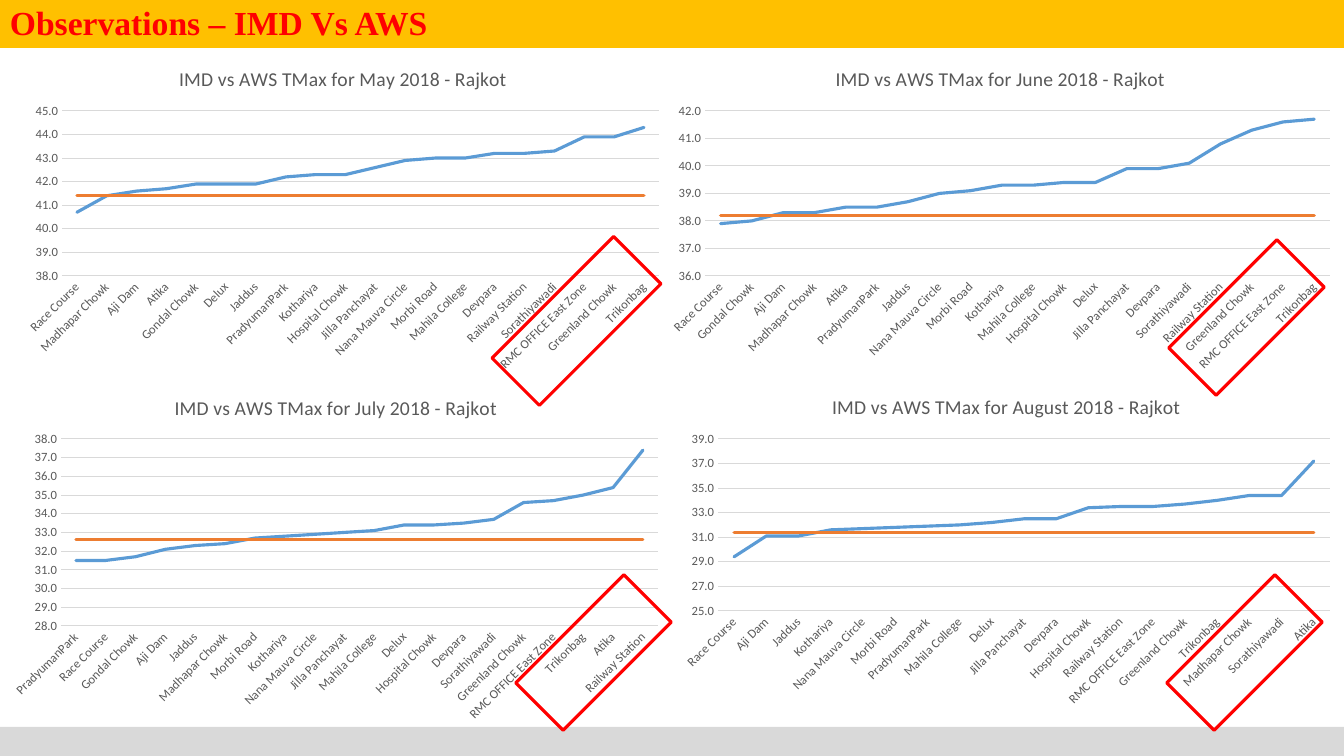
from lxml import etree
from pptx import Presentation
from pptx.chart.data import CategoryChartData
from pptx.dml.color import RGBColor
from pptx.enum.chart import XL_CHART_TYPE, XL_MARKER_STYLE, XL_TICK_MARK
from pptx.enum.shapes import MSO_SHAPE
from pptx.enum.text import MSO_ANCHOR, PP_ALIGN
from pptx.oxml.ns import qn
from pptx.util import Pt

LINE, NO_TICK, NO_MARKER = XL_CHART_TYPE.LINE, XL_TICK_MARK.NONE, XL_MARKER_STYLE.NONE
RECT, BOTTOM, LEFT = MSO_SHAPE.RECTANGLE, MSO_ANCHOR.BOTTOM, PP_ALIGN.LEFT

PX = 12192000 / 1344
WIDTH, HEIGHT = 1344, 756
COLORS = {"banner": "FFC000", "red": "FF0000", "footer": "D9D9D9",
          "grid": "D9D9D9", "label": "595959", "aws": "5B9BD5", "imd": "ED7D31"}

TITLE = "Observations – IMD Vs AWS"
BANNER = (0, 0, WIDTH, 48)
FOOTER = (0, 727, WIDTH, 29)

# box and plot are (left, top, width, height); scale is (min, max, step)
CHARTS = [
    {"month": "May", "box": (14, 50, 658, 328), "plot": (62, 111, 597, 165),
     "scale": (38, 45, 1), "imd": 41.4,
     "aws": [("Race Course", 40.7), ("Madhapar Chowk", 41.4), ("Aji Dam", 41.6),
             ("Atika", 41.7), ("Gondal Chowk", 41.9), ("Delux", 41.9),
             ("Jaddus", 41.9), ("PradyumanPark", 42.2), ("Kothariya", 42.3),
             ("Hospital Chowk", 42.3), ("Jilla Panchayat", 42.6),
             ("Nana Mauva Circle", 42.9), ("Morbi Road", 43.0),
             ("Mahila College", 43.0), ("Devpara", 43.2),
             ("Railway Station", 43.2), ("Sorathiyawadi", 43.3),
             ("RMC OFFICE East Zone", 43.9), ("Greenland Chowk", 43.9),
             ("Trikonbag", 44.3)]},
    {"month": "June", "box": (657, 50, 687, 328), "plot": (705, 111, 625, 165),
     "scale": (36, 42, 1), "imd": 38.2,
     "aws": [("Race Course", 37.9), ("Gondal Chowk", 38.0), ("Aji Dam", 38.3),
             ("Madhapar Chowk", 38.3), ("Atika", 38.5), ("PradyumanPark", 38.5),
             ("Jaddus", 38.7), ("Nana Mauva Circle", 39.0), ("Morbi Road", 39.1),
             ("Kothariya", 39.3), ("Mahila College", 39.3),
             ("Hospital Chowk", 39.4), ("Delux", 39.4), ("Jilla Panchayat", 39.9),
             ("Devpara", 39.9), ("Sorathiyawadi", 40.1), ("Railway Station", 40.8),
             ("Greenland Chowk", 41.3), ("RMC OFFICE East Zone", 41.6),
             ("Trikonbag", 41.7)]},
    {"month": "July", "box": (0, 378, 672, 351), "plot": (61, 439, 597, 187),
     "scale": (28, 38, 1), "imd": 32.6,
     "aws": [("PradyumanPark", 31.5), ("Race Course", 31.5), ("Gondal Chowk", 31.7),
             ("Aji Dam", 32.1), ("Jaddus", 32.3), ("Madhapar Chowk", 32.4),
             ("Morbi Road", 32.7), ("Kothariya", 32.8), ("Nana Mauva Circle", 32.9),
             ("Jilla Panchayat", 33.0), ("Mahila College", 33.1), ("Delux", 33.4),
             ("Hospital Chowk", 33.4), ("Devpara", 33.5), ("Sorathiyawadi", 33.7),
             ("Greenland Chowk", 34.6), ("RMC OFFICE East Zone", 34.7),
             ("Trikonbag", 35.0), ("Atika", 35.4), ("Railway Station", 37.4)]},
    {"month": "August", "box": (670, 378, 673, 336), "plot": (718, 439, 612, 172),
     "scale": (25, 39, 2), "imd": 31.4,
     "aws": [("Race Course", 29.4), ("Aji Dam", 31.1), ("Jaddus", 31.1),
             ("Kothariya", 31.6), ("Nana Mauva Circle", 31.7), ("Morbi Road", 31.8),
             ("PradyumanPark", 31.9), ("Mahila College", 32.0), ("Delux", 32.2),
             ("Jilla Panchayat", 32.5), ("Devpara", 32.5), ("Hospital Chowk", 33.4),
             ("Railway Station", 33.5), ("RMC OFFICE East Zone", 33.5),
             ("Greenland Chowk", 33.7), ("Trikonbag", 34.0),
             ("Madhapar Chowk", 34.4), ("Sorathiyawadi", 34.4), ("Atika", 37.2)]},
]
HIGHLIGHTS = [(1213, 241, 67, 153), (560, 576, 67, 153),
              (1211, 576, 67, 153), (543, 235, 67, 172)]


def emu(box):
    return [round(v * PX) for v in box]


def rgb(name):
    return RGBColor.from_string(COLORS[name])


def set_font(font, size, color="label", name="Calibri", bold=False):
    font.size, font.name, font.bold = Pt(size), name, bold
    font.color.rgb = rgb(color)


def set_line(line, color, width):
    line.color.rgb = rgb(color)
    line.width = Pt(width)


def add_rect(slide, box, fill=None):
    s = slide.shapes.add_shape(RECT, *emu(box))
    s.shadow.inherit = False
    if fill:
        s.fill.solid()
        s.fill.fore_color.rgb = rgb(fill)
        s.line.fill.background()
    else:
        s.fill.background()
    return s


def place_plot(chart, box, plot):
    """Fix the inner plot area as fractions of the chart box."""
    area = chart._chartSpace.find(".//" + qn("c:plotArea"))
    for old in area.findall(qn("c:layout")):
        area.remove(old)
    layout = etree.Element(qn("c:layout"))
    manual = etree.SubElement(layout, qn("c:manualLayout"))
    (left, top, w, h), (x, y, pw, ph) = box, plot
    values = {"layoutTarget": "inner", "xMode": "edge", "yMode": "edge",
              "x": (x - left) / w, "y": (y - top) / h, "w": pw / w, "h": ph / h}
    for tag, value in values.items():
        etree.SubElement(manual, qn("c:" + tag)).set("val", str(value))
    area.insert(0, layout)


def add_month_chart(slide, month, box, plot, scale, imd, aws):
    data = CategoryChartData(number_format="0.0")
    data.categories = [station for station, _ in aws]
    data.add_series("Series 1", [value for _, value in aws])
    data.add_series("Series 2", [imd] * len(aws))
    chart = slide.shapes.add_chart(LINE, *emu(box), data).chart
    chart.has_legend = False
    set_font(chart.font, 10)

    chart.has_title = True
    r = chart.chart_title.text_frame.paragraphs[0].add_run()
    r.text = f"IMD vs AWS TMax for {month} 2018 - Rajkot"
    set_font(r.font, 14)
    chart.chart_title.include_in_layout = False

    cat, val = chart.category_axis, chart.value_axis
    for axis in (cat, val):
        axis.major_tick_mark = axis.minor_tick_mark = NO_TICK
        set_font(axis.tick_labels.font, 9)
    set_line(cat.format.line, "grid", 0.75)
    body = cat._element.find(qn("c:txPr")).find(qn("a:bodyPr"))
    body.set("rot", "-2700000")
    body.set("vert", "horz")
    val.minimum_scale, val.maximum_scale, val.major_unit = scale
    val.tick_labels.number_format = "0.0"
    val.tick_labels.number_format_is_linked = False
    val.format.line.fill.background()
    val.has_major_gridlines = True
    set_line(val.major_gridlines.format.line, "grid", 0.75)

    chart.plots[0].vary_by_categories = False
    for series, color in zip(chart.plots[0].series, ("aws", "imd")):
        series.smooth = False
        series.marker.style = NO_MARKER
        set_line(series.format.line, color, 2.25)
        series.format.line._get_or_add_ln().set("cap", "rnd")
    place_plot(chart, box, plot)


prs = Presentation()
prs.slide_width, prs.slide_height = emu((WIDTH, HEIGHT))
slide = prs.slides.add_slide(prs.slide_layouts[6])

banner = add_rect(slide, BANNER, "banner")
tf = banner.text_frame
tf.word_wrap = True
tf.vertical_anchor = BOTTOM
p = tf.paragraphs[0]
p.alignment = LEFT
p.line_spacing = 0.9
r = p.add_run()
r.text = TITLE
set_font(r.font, 24, "red", "Times New Roman", True)

add_rect(slide, FOOTER, "footer")
for month_chart in CHARTS:
    add_month_chart(slide, **month_chart)
for box in HIGHLIGHTS:
    s = add_rect(slide, box)
    set_line(s.line, "red", 2.25)
    s.rotation = 45

prs.save("out.pptx")
